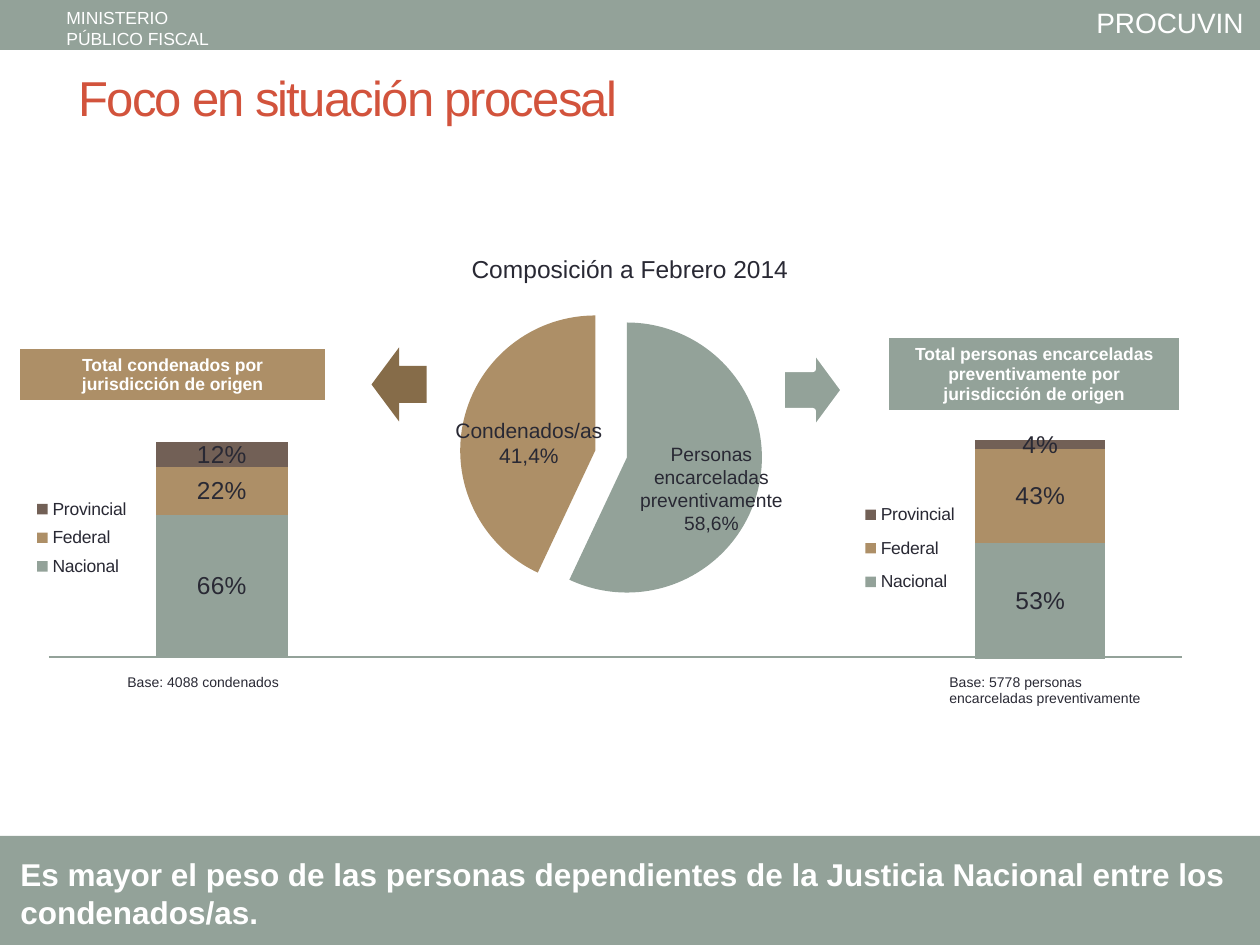
from lxml import etree
from pptx import Presentation
from pptx import util as u
from pptx.chart import data as chart_data
from pptx.dml import color
from pptx.enum import chart as chart_enum, shapes, text
from pptx.oxml import parse_xml
from pptx.oxml.ns import nsdecls, qn

PX = u.Inches(1) / 126
SAGE, TAN, BROWN, DARK_TAN = "93A299", "AD8F67", "726056", "866C49"
INK, WHITE, RED = "292934", "FFFFFF", "D2533C"
LEFT, CENTER = text.PP_ALIGN.LEFT, text.PP_ALIGN.CENTER


def rgb(value):
    return color.RGBColor.from_string(value)


def write(frame, content, size, fill=INK, bold=False, align=LEFT, wrap=True, spacing=0):
    frame.word_wrap = wrap
    frame.text = content
    for paragraph in frame.paragraphs:
        paragraph.alignment = align
        for run in paragraph.runs:
            run.font.name = "Arial"
            run.font.size = u.Pt(size)
            run.font.bold = bold
            run.font.color.rgb = rgb(fill)
            if spacing:
                run.font._element.set("spc", str(spacing * 100))


presentation = Presentation()
presentation.slide_width = u.Inches(10)
presentation.slide_height = u.Inches(7.5)
slide = presentation.slides.add_slide(presentation.slide_layouts[5])

title = slide.shapes.title
title.left, title.top, title.width, title.height = [round(v * PX) for v in (66, 18, 1134, 158)]
write(title.text_frame, "Foco en situación procesal", 28, RED, spacing=-1)
title.text_frame.vertical_anchor = text.MSO_ANCHOR.MIDDLE
title.text_frame.auto_size = text.MSO_AUTO_SIZE.NONE

RECTANGLE, ARROW = shapes.MSO_SHAPE.RECTANGLE, shapes.MSO_SHAPE.DOWN_ARROW
for kind, box, fill, rotation, outline in (
    (RECTANGLE, (0, 0, 1260, 50), SAGE, 0, 0),
    (RECTANGLE, (0, 836, 1260, 116), SAGE, 0, 0),
    (ARROW, (362, 357, 74, 55), DARK_TAN, 90, 0),
    (ARROW, (771, 359, 84, 62), SAGE, 270, 3.5),
):
    shape = slide.shapes.add_shape(kind, *[round(v * PX) for v in box])
    shape.shadow.inherit = False
    shape.rotation = rotation
    shape.fill.solid()
    shape.fill.fore_color.rgb = rgb(fill)
    if outline:
        shape.line.color.rgb = rgb(WHITE)
        shape.line.width = u.Pt(outline)
    else:
        shape.line.fill.background()

layouts = []

pie_data = chart_data.CategoryChartData()
pie_data.categories = ["1", "2"]
pie_data.add_series("Series 1", (57, 43))
pie_chart = slide.shapes.add_chart(
    chart_enum.XL_CHART_TYPE.PIE, *[round(v * PX) for v in (357, 238, 605, 455)], pie_data
).chart
pie_chart.has_title = False
pie_chart.has_legend = False
pie_chart.font.name = "Arial"
pie_chart.font.size = u.Pt(18)
pie_chart.font.color.rgb = rgb(INK)
pie_chart.plots[0].vary_by_categories = False
pie_series = pie_chart.plots[0].series[0]
for index, fill in enumerate((SAGE, TAN)):
    point = pie_series.points[index]
    point.format.fill.solid()
    point.format.fill.fore_color.rgb = rgb(fill)
explosion = parse_xml(f'<c:explosion {nsdecls("c")} val="12"/>')
pie_series._element.find(qn("c:dPt")).addprevious(explosion)
layouts.append((pie_chart, "plotArea", (0.17, 0.14, 0.5, 0.67)))

for box, values, plot_box, legend_box in (
    ((23, 433, 406, 287), (66, 22, 12), (0, 0.03, 0.98, 0.75), (0.02, 0.2, 0.25, 0.33)),
    ((844, 431, 401, 268), (53, 43, 4), (0, 0.03, 0.98, 0.82), (0.04, 0.22, 0.25, 0.43)),
):
    column_data = chart_data.CategoryChartData()
    column_data.categories = ["1"]
    for name, value in zip(("Nacional", "Federal", "Provincial"), values):
        column_data.add_series(name, (value,))
    chart = slide.shapes.add_chart(
        chart_enum.XL_CHART_TYPE.COLUMN_STACKED_100, *[round(v * PX) for v in box], column_data
    ).chart
    chart.has_title = False
    chart.font.name = "Arial"
    chart.font.size = u.Pt(18)
    chart.font.color.rgb = rgb(INK)
    chart.category_axis.visible = False
    chart.value_axis.visible = False
    chart.value_axis.has_major_gridlines = False
    chart.has_legend = True
    chart.legend.position = chart_enum.XL_LEGEND_POSITION.RIGHT
    chart.legend.include_in_layout = False
    chart.legend.font.size = u.Pt(10)
    chart.legend.font.name = "Arial"
    chart.legend.font.color.rgb = rgb(INK)
    plot = chart.plots[0]
    plot.vary_by_categories = False
    plot.gap_width = 202
    plot.overlap = 100
    for series, fill in zip(plot.series, (SAGE, TAN, BROWN)):
        series.format.fill.solid()
        series.format.fill.fore_color.rgb = rgb(fill)
        labels = series.data_labels
        labels.show_value = True
        labels.number_format = '0"%"'
        labels.number_format_is_linked = False
        labels.font.size = u.Pt(14)
        labels.font.name = "Arial"
        labels.font.color.rgb = rgb(INK)
    layouts += [(chart, "plotArea", plot_box), (chart, "legend", legend_box)]

for chart, part, box in layouts:
    parent = chart._chartSpace.xpath(f".//c:{part}")[0]
    for old_layout in parent.findall(qn("c:layout")):
        parent.remove(old_layout)
    layout = parse_xml(f'<c:layout {nsdecls("c")}><c:manualLayout/></c:layout>')
    settings = [("xMode", "edge"), ("yMode", "edge"), *zip("xywh", box)]
    if part == "plotArea":
        settings.insert(0, ("layoutTarget", "inner"))
    for tag, value in settings:
        etree.SubElement(layout[0], qn(f"c:{tag}")).set("val", str(value))
    parent.insert(0 if part == "plotArea" else 1, layout)

for box, content, fill in (
    ((19, 348, 307, 54), "Total condenados por jurisdicción de origen", TAN),
    ((888, 337, 292, 75), "Total personas encarceladas preventivamente por jurisdicción de origen", SAGE),
):
    table = slide.shapes.add_table(1, 1, *[round(v * PX) for v in box]).table
    table.first_row = False
    table.horz_banding = False
    cell = table.cell(0, 0)
    cell.vertical_anchor = text.MSO_ANCHOR.MIDDLE
    cell.fill.solid()
    cell.fill.fore_color.rgb = rgb(fill)
    write(cell.text_frame, content, 10, WHITE, bold=True, align=CENTER)
    for index, (side, width) in enumerate((("L", 1), ("R", 1), ("T", 1), ("B", 3))):
        border = parse_xml(
            f'<a:ln{side} {nsdecls("a")} w="{u.Pt(width)}"><a:solidFill>'
            f'<a:srgbClr val="{WHITE}"/></a:solidFill></a:ln{side}>'
        )
        cell._tc.get_or_add_tcPr().insert(index, border)

baseline = slide.shapes.add_connector(
    shapes.MSO_CONNECTOR.STRAIGHT, *[round(v * PX) for v in (49, 657, 1182, 657)]
)
baseline.line.color.rgb = rgb(SAGE)
baseline.line.width = u.Pt(0.75)
etree.SubElement(baseline._element.spPr, qn("a:effectLst"))

for box, content, style in (
    ((1084, -1, 174, 47), "PROCUVIN", dict(size=16, fill=WHITE, wrap=False)),
    ((54, 1, 169, 55), "MINISTERIO\nPÚBLICO FISCAL", dict(size=10, fill=WHITE)),
    ((427, 248, 406, 43), "Composición a Febrero 2014", dict(size=14, align=CENTER)),
    ((441, 411, 176, 63), "Condenados/as 41,4%", dict(size=12, align=CENTER)),
    ((624, 436, 175, 106), "Personas encarceladas preventivamente 58,6%", dict(size=11, align=CENTER)),
    ((115, 667, 198, 30), "Base: 4088 condenados", dict(size=8)),
    ((937, 667, 228, 47), "Base: 5778 personas encarceladas preventivamente", dict(size=8)),
    (
        (8, 849, 1260, 89),
        "Es mayor el peso de las personas dependientes de la Justicia Nacional entre los condenados/as.",
        dict(size=18, fill=WHITE, bold=True),
    ),
):
    text_box = slide.shapes.add_textbox(*[round(v * PX) for v in box])
    write(text_box.text_frame, content, **style)

presentation.save("out.pptx")
